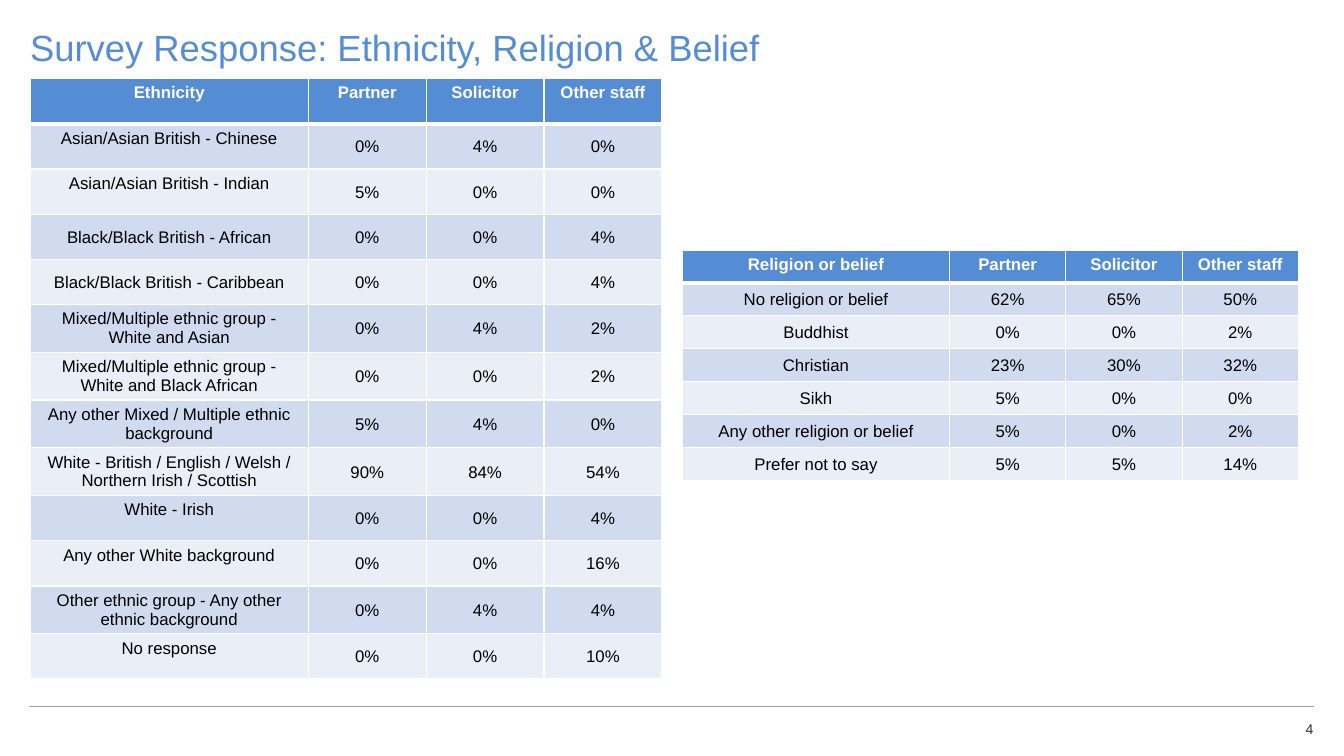
from lxml import etree
from pptx import Presentation
from pptx.dml.color import RGBColor
from pptx.enum.text import MSO_ANCHOR, MSO_AUTO_SIZE, PP_ALIGN
from pptx.enum.shapes import MSO_CONNECTOR
from pptx.oxml import parse_xml
from pptx.oxml.ns import nsdecls, qn
from pptx.util import Cm, Pt

TOP, MIDDLE = MSO_ANCHOR.TOP, MSO_ANCHOR.MIDDLE
LEFT, CENTER, RIGHT = PP_ALIGN.LEFT, PP_ALIGN.CENTER, PP_ALIGN.RIGHT
NO_AUTOFIT = MSO_AUTO_SIZE.NONE
STRAIGHT = MSO_CONNECTOR.STRAIGHT
FONT = "Arial"
BLUE, WHITE, BLACK = "558DD5", "FFFFFF", "000000"
BANDS = ["E9EEF7", "D1DBEF"]

ETHNICITY = [
    ("Ethnicity", "Partner", "Solicitor", "Other staff"),
    ("Asian/Asian British - Chinese", "0%", "4%", "0%"),
    ("Asian/Asian British - Indian", "5%", "0%", "0%"),
    ("Black/Black British - African", "0%", "0%", "4%"),
    ("Black/Black British - Caribbean", "0%", "0%", "4%"),
    ("Mixed/Multiple ethnic group - White and Asian", "0%", "4%", "2%"),
    ("Mixed/Multiple ethnic group - White and Black African", "0%", "0%", "2%"),
    ("Any other Mixed / Multiple ethnic background", "5%", "4%", "0%"),
    ("White - British / English / Welsh / Northern Irish / Scottish", "90%", "84%", "54%"),
    ("White - Irish", "0%", "0%", "4%"),
    ("Any other White background", "0%", "0%", "16%"),
    ("Other ethnic group - Any other ethnic background", "0%", "4%", "4%"),
    ("No response", "0%", "0%", "10%"),
]
RELIGION = [
    ("Religion or belief", "Partner", "Solicitor", "Other staff"),
    ("No religion or belief", "62%", "65%", "50%"),
    ("Buddhist", "0%", "0%", "2%"),
    ("Christian", "23%", "30%", "32%"),
    ("Sikh", "5%", "0%", "0%"),
    ("Any other religion or belief", "5%", "0%", "2%"),
    ("Prefer not to say", "5%", "5%", "14%"),
]
TABLES = [
    (ETHNICITY, 0.76, 1.98, 7.01, 2.97, 1.14, (3, 4)),
    (RELIGION, 17.2, 6.3, 6.73, 2.93, 0.83, range(1, 7)),
]


def rgb(value):
    return RGBColor.from_string(value)


def add_run(tf, text, size, color, align, bold=False):
    p = tf.paragraphs[0]
    p.alignment = align
    r = p.add_run()
    r.text = text
    r.font.name = FONT
    r.font.size = Pt(size)
    r.font.bold = bold
    r.font.color.rgb = rgb(color)
    return p


prs = Presentation()
prs.slide_width, prs.slide_height = Cm(33.87), Cm(19.05)
s = prs.slides.add_slide(prs.slide_layouts[5])

title = s.shapes.title
title.left, title.top, title.width, title.height = Cm(0.76), Cm(0.76), Cm(31.98), Cm(1.63)
number = s.shapes.add_textbox(Cm(31.83), Cm(18.16), Cm(1.27), Cm(0.51))
for sp in (title, number):
    tf = sp.text_frame
    tf.word_wrap = True
    tf.auto_size = NO_AUTOFIT
    tf.vertical_anchor = TOP
    tf.margin_left = tf.margin_right = tf.margin_top = tf.margin_bottom = 0
p = add_run(title.text_frame, "Survey Response: Ethnicity, Religion & Belief", 26, BLUE, LEFT)
p.line_spacing = 0.9
p = add_run(number.text_frame, "4", 10, "2A2A2A", RIGHT)
p.space_after = Pt(6)

rule = s.shapes.add_connector(STRAIGHT, Cm(0.74), Cm(17.8), Cm(33.12), Cm(17.8))
rule.line.color.rgb = rgb("A0A0A0")
rule.line.width = Pt(0.75)
etree.SubElement(rule._element.spPr, qn("a:effectLst"))

for rows, left, top, label_w, value_w, row_h, centred in TABLES:
    widths = [label_w] + [value_w] * 3
    frame = s.shapes.add_table(len(rows), len(widths), Cm(left), Cm(top),
                               Cm(sum(widths)), Cm(row_h * len(rows)))
    table = frame.table
    for column, width in zip(table.columns, widths):
        column.width = Cm(width)
    for i, values in enumerate(rows):
        table.rows[i].height = Cm(row_h)
        header = i == 0
        for j, value in enumerate(values):
            cell = table.cell(i, j)
            tcPr = cell._tc.get_or_add_tcPr()
            for side in "LRTB":
                thick = (i, side) in ((0, "B"), (1, "T"))
                tcPr.append(parse_xml(
                    f'<a:ln{side} {nsdecls("a")} w="{Pt(3 if thick else 1)}"><a:solidFill>'
                    f'<a:srgbClr val="{WHITE}"/></a:solidFill></a:ln{side}>'))
            cell.fill.solid()
            cell.fill.fore_color.rgb = rgb(BLUE if header else BANDS[i % 2])
            if not header and (j > 0 or i in centred):
                cell.vertical_anchor = MIDDLE
                cell.margin_left = cell.margin_right = cell.margin_top = Cm(0.03)
                cell.margin_bottom = 0
            add_run(cell.text_frame, value, 12, WHITE if header else BLACK, CENTER, header)

prs.save("out.pptx")
